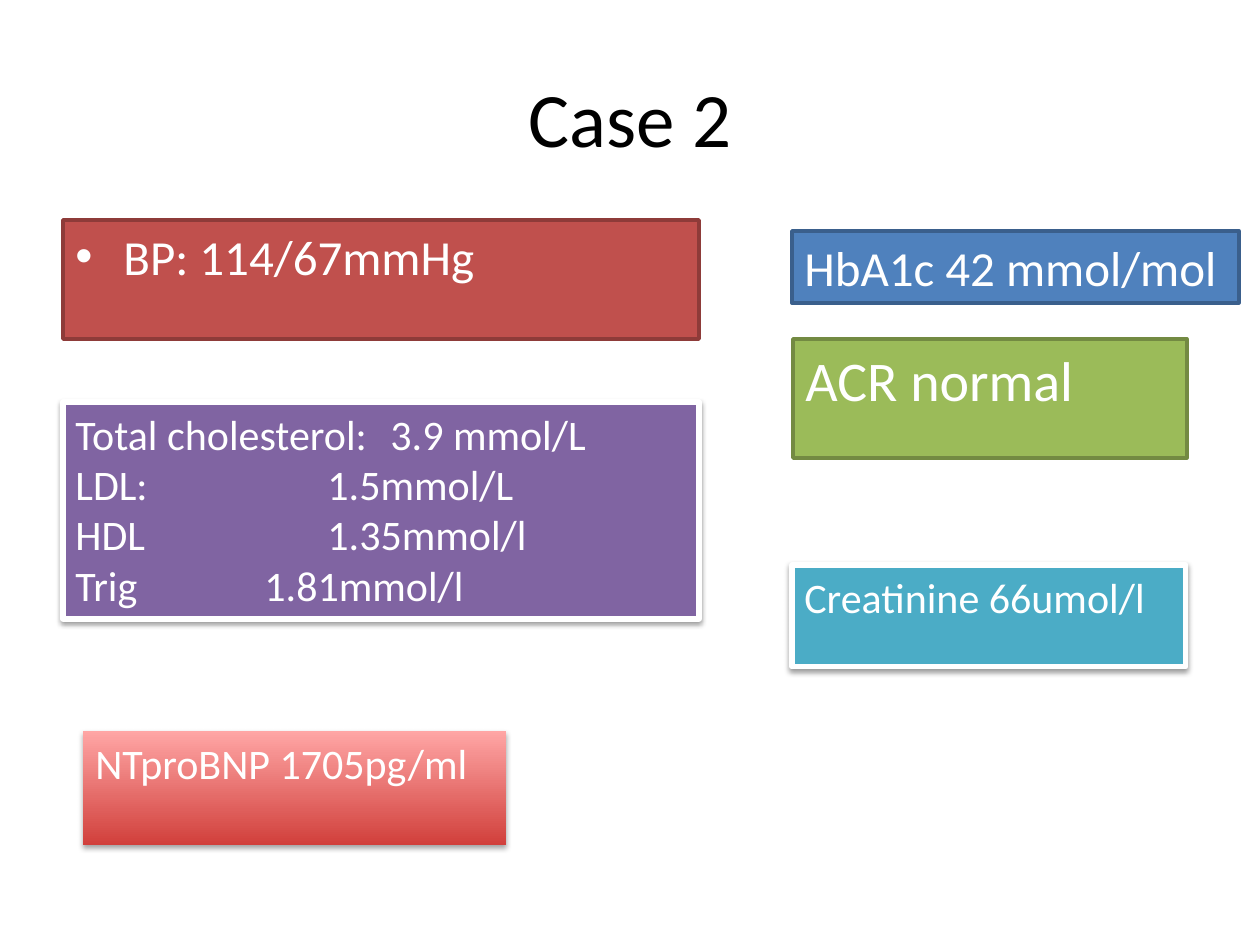
"""Build the "Case 2" slide of test results in coloured boxes."""
from lxml.etree import SubElement
from pptx import Presentation
from pptx.dml.color import RGBColor
from pptx.enum.shapes import MSO_SHAPE
from pptx.enum.text import MSO_ANCHOR, PP_ALIGN
from pptx.oxml.ns import qn
from pptx.util import Pt

PX = 914400 // 126


def rgb(code):
    return RGBColor.from_string(code)


def add_text(paragraph, text, size, color, align):
    paragraph.alignment = align
    run = paragraph.add_run()
    run.text = text
    run.font.name = "Calibri"
    run.font.size = Pt(size)
    run.font.color.rgb = rgb(color)


deck = Presentation()
deck.slide_width = 1260 * PX
deck.slide_height = 945 * PX
slide = deck.slides.add_slide(deck.slide_layouts[6])

title = slide.shapes.add_textbox(63 * PX, 38 * PX, 1134 * PX, 157 * PX).text_frame
title.word_wrap = True
title.vertical_anchor = MSO_ANCHOR.MIDDLE
add_text(title.paragraphs[0], "Case 2", 44, "000000", PP_ALIGN.CENTER)

lipids = ["Total cholesterol: \t3.9 mmol/L", "LDL:\t\t\t1.5mmol/L",
          "HDL\t\t\t1.35mmol/l", "Trig\t\t\t1.81mmol/l"]
results = [
    (63, 220, 636, 119, ["C0504D"], "8E3B39", 2, 28, ["BP: 114/67mmHg"], None),
    (792, 231, 447, 72, ["4F81BD"], "3A5F8C", 2, 28, ["HbA1c 42 mmol/mol"], None),
    (63, 402, 636, 217, ["8064A2"], "FFFFFF", 3, 24, lipids, (38, 1.6)),
    (792, 565, 394, 102, ["4BACC6"], "FFFFFF", 3, 24, ["Creatinine 66umol/l"], (38, 1.6)),
    (793, 339, 394, 119, ["9BBB59"], "738A42", 2, 32, ["ACR normal"], None),
    (83, 731, 423, 114, ["D1403C", "FFA6A5"], None, 0, 24, ["NTproBNP 1705pg/ml"], (35, 1.8)),
]

for left, top, width, height, fills, border, weight, size, lines, shadow in results:
    box = slide.shapes.add_shape(
        MSO_SHAPE.RECTANGLE, left * PX, top * PX, width * PX, height * PX)
    if len(fills) > 1:
        box.fill.gradient()
        box.fill.gradient_angle = 90
        for stop, color in zip(box.fill.gradient_stops, fills):
            stop.color.rgb = rgb(color)
    else:
        box.fill.solid()
        box.fill.fore_color.rgb = rgb(fills[0])
    if border:
        box.line.color.rgb = rgb(border)
        box.line.width = Pt(weight)
    else:
        box.line.fill.background()

    box.shadow.inherit = False
    if shadow:
        opacity, distance = shadow
        effects = box.element.spPr.find(qn("a:effectLst"))
        outer = SubElement(effects, qn("a:outerShdw"), blurRad=str(Pt(3.1)),
                           dist=str(Pt(distance)), dir="5400000", rotWithShape="0")
        tint = SubElement(outer, qn("a:srgbClr"), val="000000")
        SubElement(tint, qn("a:alpha"), val=str(opacity * 1000))

    frame = box.text_frame
    frame.word_wrap = True
    frame.vertical_anchor = MSO_ANCHOR.TOP
    for number, line in enumerate(lines):
        paragraph = frame.add_paragraph() if number else frame.paragraphs[0]
        add_text(paragraph, line, size, "FFFFFF", PP_ALIGN.LEFT)
        if line.startswith("BP"):
            layout = paragraph._p.get_or_add_pPr()
            layout.set("marL", str(48 * PX))
            layout.set("indent", str(-48 * PX))
            SubElement(layout, qn("a:buFont"), typeface="Arial")
            SubElement(layout, qn("a:buChar"), char="•")

deck.save("out.pptx")
